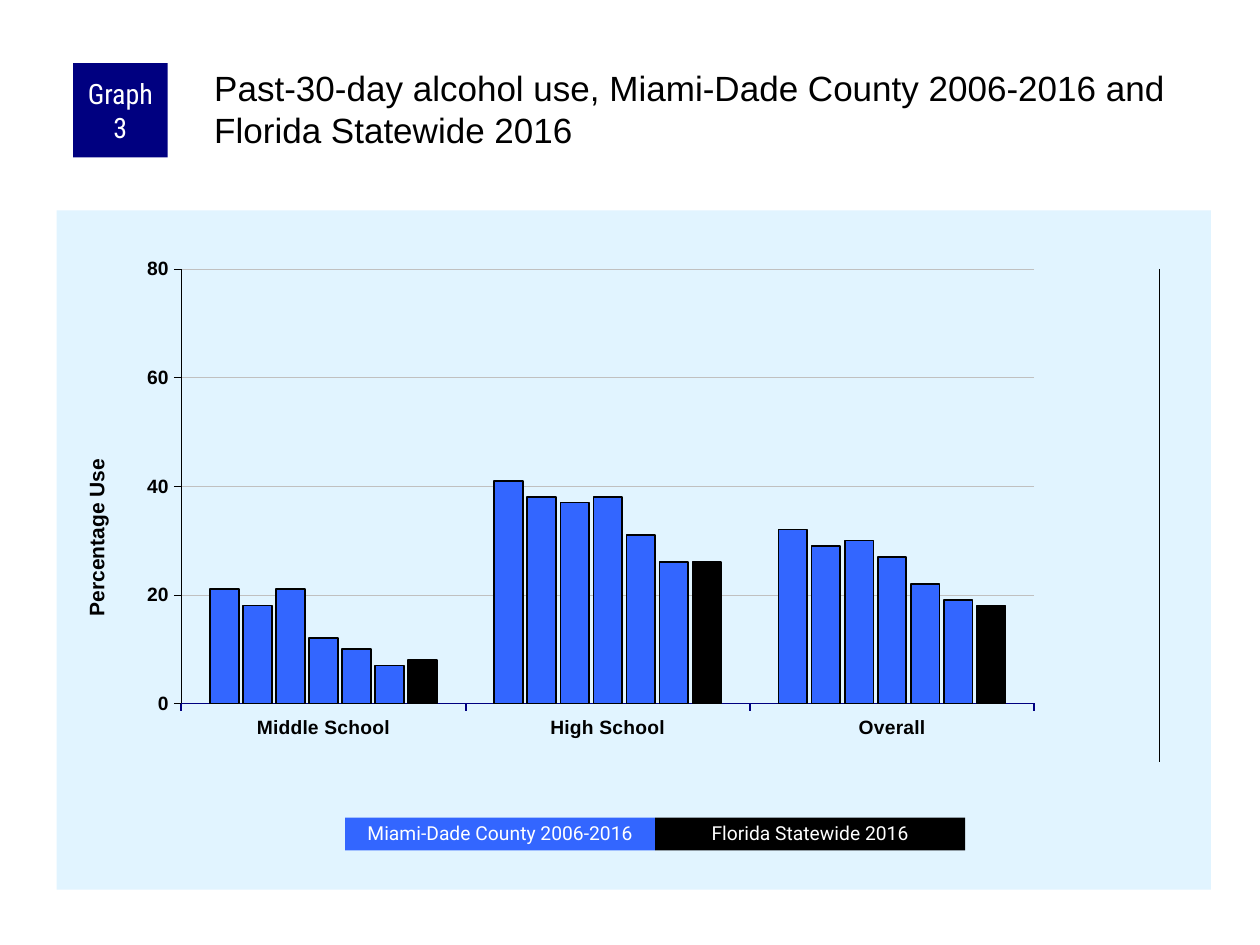
from lxml import etree
from pptx import Presentation
from pptx.chart.data import CategoryChartData
from pptx.dml.color import RGBColor
from pptx.enum.chart import XL_CHART_TYPE, XL_TICK_MARK
from pptx.enum.shapes import MSO_CONNECTOR, MSO_SHAPE
from pptx.enum.text import MSO_ANCHOR, PP_ALIGN
from pptx.oxml import parse_xml
from pptx.oxml.ns import nsdecls, qn
from pptx.util import Inches, Pt

COLUMNS = XL_CHART_TYPE.COLUMN_CLUSTERED
OUTSIDE = XL_TICK_MARK.OUTSIDE
STRAIGHT = MSO_CONNECTOR.STRAIGHT
RECT = MSO_SHAPE.RECTANGLE
TOP, MIDDLE = MSO_ANCHOR.TOP, MSO_ANCHOR.MIDDLE
LEFT, CENTER = PP_ALIGN.LEFT, PP_ALIGN.CENTER

BLACK = RGBColor(0x00, 0x00, 0x00)
WHITE = RGBColor(0xFF, 0xFF, 0xFF)
NAVY = RGBColor(0x00, 0x00, 0x80)
BLUE = RGBColor(0x33, 0x66, 0xFF)
PALE_BLUE = RGBColor(0xE1, 0xF4, 0xFF)
GRID_GREY = RGBColor(0xC0, 0xC0, 0xC0)

CHART_BOX = (0.45, 1.67, 9.16, 5.39)
PLOT = (0.108, 0.086, 0.847, 0.726)
TITLE_LAYOUT = (0.02, 0.36)

USE_BY_LEVEL = {
    "Middle School": (21, 18, 21, 12, 10, 7, 8),
    "High School": (41, 38, 37, 38, 31, 26, 26),
    "Overall": (32, 29, 30, 27, 22, 19, 18),
}


def format_font(font, size, color, name="Arial", bold=False):
    font.size = Pt(size)
    font.name = name
    font.bold = bold
    font.color.rgb = color


def format_line(line, color, width):
    line.color.rgb = color
    line.width = Pt(width)


def set_layout(parent, index, fractions, inner=False):
    """Place a chart part by fractions of the chart: x, y and optionally w, h."""
    for old in parent.findall(qn("c:layout")):
        parent.remove(old)
    names = "xywh"[:len(fractions)]
    target = '<c:layoutTarget val="inner"/>' if inner else ""
    modes = "".join(f'<c:{n}Mode val="edge"/>' for n in names)
    values = "".join(f'<c:{n} val="{v}"/>' for n, v in zip(names, fractions))
    parent.insert(index, parse_xml(
        f'<c:layout {nsdecls("c")}><c:manualLayout>{target}{modes}{values}'
        '</c:manualLayout></c:layout>'))


def fill_chart_area(chart, color):
    area = parse_xml(
        f'<c:spPr {nsdecls("c", "a")}><a:solidFill><a:srgbClr val="{color}"/>'
        '</a:solidFill><a:ln><a:noFill/></a:ln></c:spPr>')
    chart.element.find(qn("c:chart")).addnext(area)


def format_axis(axis, color, width):
    axis.major_tick_mark = OUTSIDE
    format_font(axis.tick_labels.font, 11, BLACK, bold=True)
    format_line(axis.format.line, color, width)


def add_use_chart(slide):
    data = CategoryChartData()
    data.categories = list(USE_BY_LEVEL)
    for i, values in enumerate(zip(*USE_BY_LEVEL.values()), 1):
        data.add_series(f"Series {i}", values)
    frame = slide.shapes.add_chart(COLUMNS, *map(Inches, CHART_BOX), data)
    chart = frame.chart
    chart.has_title = chart.has_legend = False
    format_font(chart.font, 8, BLACK)
    fill_chart_area(chart, PALE_BLUE)
    set_layout(chart.element.find(".//" + qn("c:plotArea")), 0, PLOT, inner=True)

    plot = chart.plots[0]
    plot.gap_width = 200
    plot.overlap = -15
    plot.vary_by_categories = False
    *county, state = plot.series
    for series in (*county, state):
        series.format.fill.solid()
        series.format.fill.fore_color.rgb = BLACK if series is state else BLUE
        format_line(series.format.line, BLACK, 1)

    format_axis(chart.category_axis, NAVY, 1)
    axis = chart.value_axis
    format_axis(axis, BLACK, 0.25)
    axis.minimum_scale, axis.maximum_scale, axis.major_unit = 0, 80, 20
    format_line(axis.major_gridlines.format.line, GRID_GREY, 0.25)
    title = axis.axis_title
    r = title.text_frame.paragraphs[0].add_run()
    r.text = "Percentage Use"
    format_font(r.font, 12, BLACK, bold=True)
    title.text_frame._txBody.bodyPr.set("rot", "-5400000")
    title.text_frame._txBody.bodyPr.set("vert", "horz")
    set_layout(title._element, 1, TITLE_LAYOUT)


def add_right_axis_line(slide):
    left, top, width, height = CHART_BOX
    x = Inches(left + width * (PLOT[0] + PLOT[2]))
    y = Inches(top + height * PLOT[1])
    line = slide.shapes.add_connector(
        STRAIGHT, x, y, x, y + Inches(height * PLOT[3]))
    format_line(line.line, BLACK, 0.25)
    etree.SubElement(line._element.spPr, qn("a:effectLst"))


def add_label(slide, box, text, fill, size, font, margin=0.1, spacing=None):
    s = slide.shapes.add_shape(RECT, *map(Inches, box))
    s.shadow.inherit = False
    s.fill.solid()
    s.fill.fore_color.rgb = fill
    s.line.fill.background()
    tf = s.text_frame
    tf.word_wrap = True
    tf.vertical_anchor = MIDDLE
    tf.margin_left = tf.margin_right = Inches(margin)
    tf.margin_top = tf.margin_bottom = 0
    p = tf.paragraphs[0]
    p.alignment = CENTER
    p.line_spacing = spacing
    r = p.add_run()
    r.text = text
    format_font(r.font, size, WHITE, font)


def add_title(slide, text):
    s = slide.shapes.title
    s.left, s.top, s.width, s.height = map(Inches, (1.67, 0.5, 7.92, 0.83))
    tf = s.text_frame
    tf.word_wrap = True
    tf.vertical_anchor = TOP
    tf.margin_left = tf.margin_top = Inches(0.03)
    tf.margin_right = tf.margin_bottom = 0
    p = tf.paragraphs[0]
    p.alignment = LEFT
    r = p.add_run()
    r.text = text
    format_font(r.font, 20, BLACK)


def main():
    prs = Presentation()
    prs.slide_width, prs.slide_height = Inches(10), Inches(7.5)
    slide = prs.slides.add_slide(prs.slide_layouts[5])
    add_use_chart(slide)
    add_right_axis_line(slide)
    add_label(slide, (0.58, 0.5, 0.75, 0.75), "Graph 3", NAVY, 16,
              "Roboto Condensed", margin=0.05)
    add_title(slide, "Past-30-day alcohol use, Miami-Dade County 2006-2016 "
                     "and Florida Statewide 2016")
    legend = (("Miami-Dade County 2006-2016", BLUE),
              ("Florida Statewide 2016", BLACK))
    for i, (text, color) in enumerate(legend):
        add_label(slide, (2.74 + 2.46 * i, 6.49, 2.46, 0.26), text, color, 11,
                  "Roboto", spacing=0.9)
    prs.save("out.pptx")


if __name__ == "__main__":
    main()
